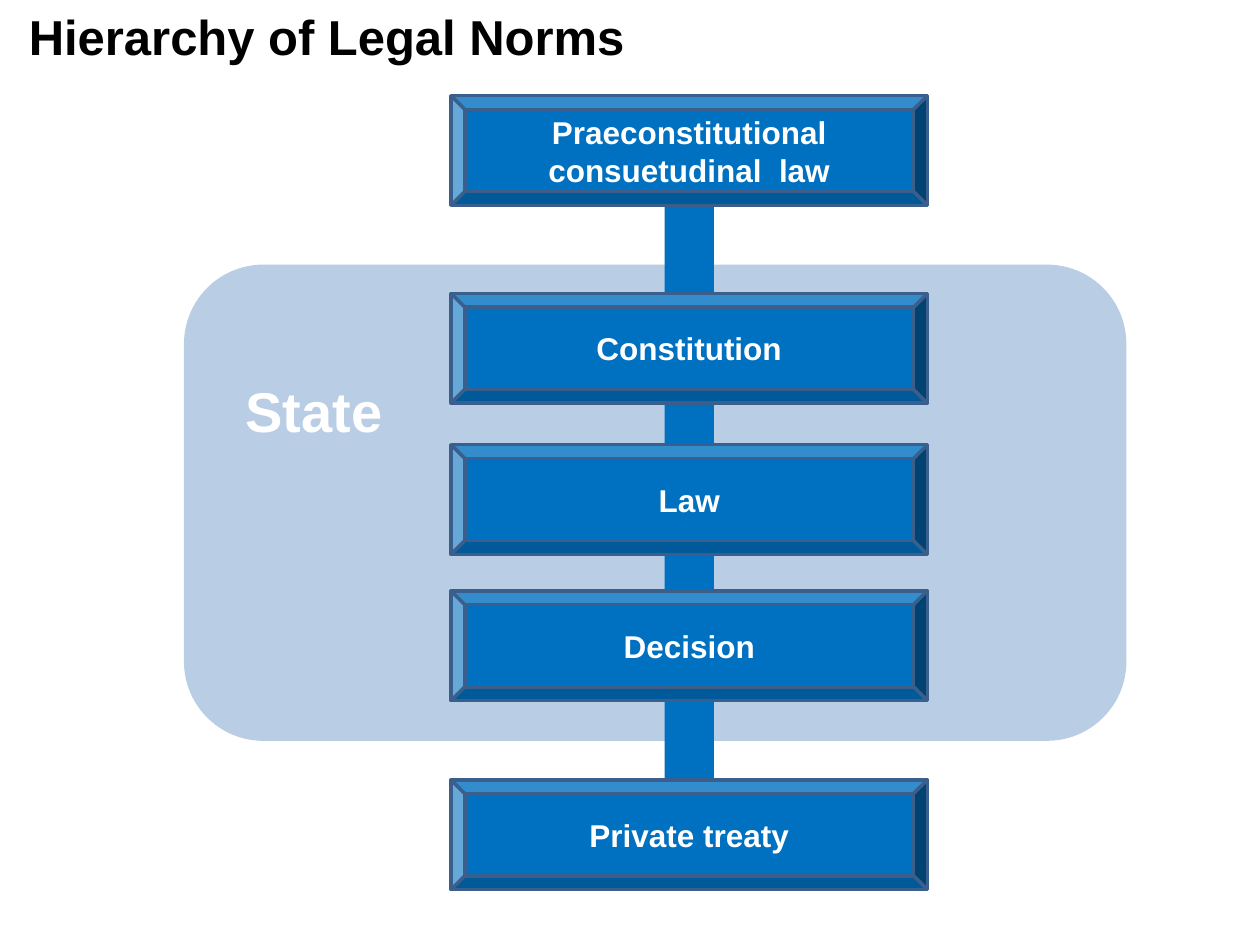
from pptx import Presentation
from pptx.dml.color import RGBColor
from pptx.enum.shapes import MSO_SHAPE
from pptx.enum.text import MSO_ANCHOR, MSO_AUTO_SIZE, PP_ALIGN
from pptx.util import Inches, Pt

ROUNDED, RECT, BEVEL = MSO_SHAPE.ROUNDED_RECTANGLE, MSO_SHAPE.RECTANGLE, MSO_SHAPE.BEVEL
MIDDLE, CENTER, LEFT = MSO_ANCHOR.MIDDLE, PP_ALIGN.CENTER, PP_ALIGN.LEFT
GROW = MSO_AUTO_SIZE.SHAPE_TO_FIT_TEXT
BLACK = RGBColor(0x00, 0x00, 0x00)
WHITE = RGBColor(0xFF, 0xFF, 0xFF)
BLUE = RGBColor(0x00, 0x70, 0xC0)
EDGE = RGBColor(0x3A, 0x5F, 0x8C)
PALE = RGBColor(0xB9, 0xCD, 0xE5)

prs = Presentation()
prs.slide_width, prs.slide_height = Inches(10), Inches(7.5)
COL, ROW = prs.slide_width / 100, prs.slide_height / 75
s = prs.slides.add_slide(prs.slide_layouts[6])


def add_block(kind, x, y, w, h, fill):
    sp = s.shapes.add_shape(kind, int(x * COL), int(y * ROW), int(w * COL), int(h * ROW))
    sp.shadow.inherit = False
    sp.fill.solid()
    sp.fill.fore_color.rgb = fill
    sp.line.fill.background()
    return sp


def write(tf, text, size, color, align):
    p = tf.paragraphs[0]
    p.alignment = align
    r = p.add_run()
    r.text = text
    for name, value in {"name": "Arial", "size": Pt(size), "bold": True}.items():
        setattr(r.font, name, value)
    r.font.color.rgb = color


box_x, box_w, box_h = 35.8, 37.8, 8.7
norms = [
    ("Praeconstitutional consuetudinal  law", 7.6),
    ("Constitution", 23.3),
    ("Law", 35.3),
    ("Decision", 46.9),
    ("Private treaty", 61.9),
]
stem_w = 3.9
stem_x = box_x + (box_w - stem_w) / 2
stem_y = norms[0][1] + box_h * 0.63
stem_h = norms[-1][1] + box_h / 2 - stem_y

add_block(ROUNDED, 14.6, 21, 74.8, 37.8, PALE)
add_block(RECT, stem_x, stem_y, stem_w, stem_h, BLUE)

for text, y in norms:
    sp = add_block(BEVEL, box_x, y, box_w, box_h, BLUE)
    sp.line.color.rgb = EDGE
    sp.line.width = Pt(2)
    tf = sp.text_frame
    tf.word_wrap = True
    tf.vertical_anchor = MIDDLE
    write(tf, text, 18, WHITE, CENTER)

labels = [
    ("State", 18.5, 29.4, 13, 6.4, 32, WHITE),
    ("Hierarchy of Legal Norms", 1.3, 0, 49.9, 5.7, 28, BLACK),
]
for text, x, y, w, h, size, color in labels:
    sp = s.shapes.add_textbox(int(x * COL), int(y * ROW), int(w * COL), int(h * ROW))
    tf = sp.text_frame
    tf.word_wrap = False
    tf.auto_size = GROW
    write(tf, text, size, color, LEFT)

prs.save("out.pptx")
